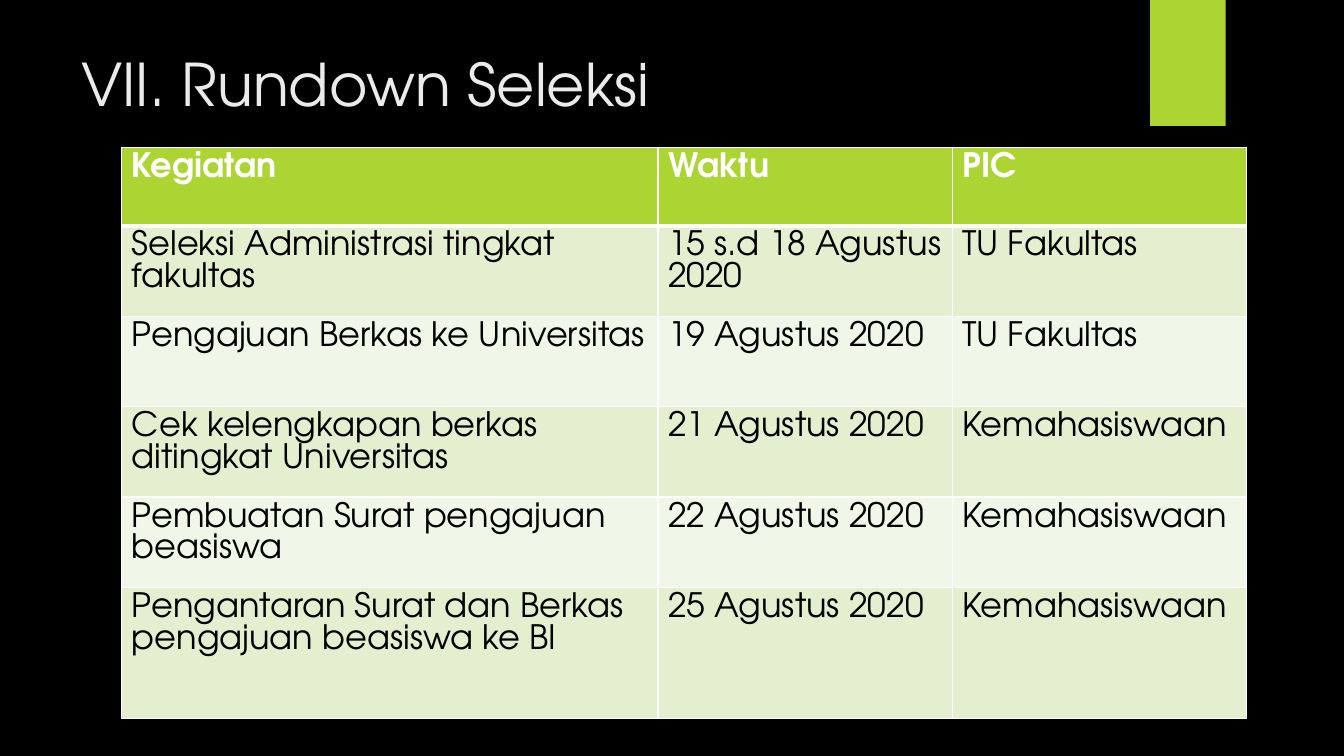
from lxml import etree
from pptx import Presentation
from pptx.dml.color import RGBColor
from pptx.enum.shapes import MSO_SHAPE
from pptx.enum.text import MSO_ANCHOR
from pptx.oxml.ns import qn
from pptx.util import Pt

RECT = MSO_SHAPE.RECTANGLE
TOP = MSO_ANCHOR.TOP
BLACK = RGBColor(0x00, 0x00, 0x00)
WHITE = RGBColor(0xFF, 0xFF, 0xFF)
PALE = RGBColor(0xEB, 0xEB, 0xEB)
LIME = RGBColor(0xAC, 0xD4, 0x33)
MINT = RGBColor(0xE3, 0xEF, 0xCE)
CREAM = RGBColor(0xF1, 0xF7, 0xE8)

HEAD = ("Kegiatan", "Waktu", "PIC")
PLAN = [
    ("Seleksi Administrasi tingkat fakultas", "15 s.d 18 Agustus 2020", "TU Fakultas"),
    ("Pengajuan Berkas ke Universitas", "19 Agustus 2020", "TU Fakultas"),
    ("Cek kelengkapan berkas ditingkat Universitas", "21 Agustus 2020", "Kemahasiswaan"),
    ("Pembuatan Surat pengajuan beasiswa", "22 Agustus 2020", "Kemahasiswaan"),
    ("Pengantaran Surat dan Berkas pengajuan beasiswa ke BI", "25 Agustus 2020", "Kemahasiswaan"),
]
COLS = (383, 210.25, 210.25)
ROWS = (56, 64.6, 64.6, 64.6, 64.6, 93.6)


class Deck:
    font = "TeX Gyre Adventor"

    def __init__(self, slide):
        self.slide = slide
        fill = slide.background.fill
        fill.solid()
        fill.fore_color.rgb = BLACK

    def label(self, frame, text, size, color, space, bold=False):
        para = frame.paragraphs[0]
        para.line_spacing = space
        run = para.add_run()
        run.text = text
        run.font.name = self.font
        run.font.size = Pt(size)
        run.font.bold = bold
        run.font.color.rgb = color

    def block(self, x, y, w, h, color):
        shape = self.slide.shapes.add_shape(RECT, Pt(x), Pt(y), Pt(w), Pt(h))
        shape.shadow.inherit = False
        shape.fill.solid()
        shape.fill.fore_color.rgb = color
        shape.line.fill.background()

    def title(self, x, y, w, h, text):
        frame = self.slide.shapes.add_textbox(Pt(x), Pt(y), Pt(w), Pt(h)).text_frame
        frame.word_wrap = True
        frame.vertical_anchor = TOP
        self.label(frame, text, 42, PALE, 0.9)

    def edge(self, cell, side, width):
        props = cell._tc.get_or_add_tcPr()
        line = etree.SubElement(props, qn(f"a:ln{side}"), w=str(Pt(width)))
        solid = etree.SubElement(line, qn("a:solidFill"))
        etree.SubElement(solid, qn("a:srgbClr"), val=str(WHITE))

    def cell(self, cell, text, fill, color, top, base, bold):
        for side, width in (("L", 1), ("R", 1), ("T", top), ("B", base)):
            self.edge(cell, side, width)
        cell.fill.solid()
        cell.fill.fore_color.rgb = fill
        self.label(cell.text_frame, text, 24, color, Pt(22.5), bold)

    def table(self, x, y, cols, rows, data):
        shape = self.slide.shapes.add_table(
            len(rows), len(cols), Pt(x), Pt(y), Pt(sum(cols)), Pt(sum(rows)))
        table = shape.table
        for col, width in zip(table.columns, cols):
            col.width = Pt(width)
        for i, (row, high, texts) in enumerate(zip(table.rows, rows, data)):
            row.height = Pt(high)
            head = i == 0
            fill = LIME if head else MINT if i % 2 else CREAM
            color = WHITE if head else BLACK
            top = 3 if i == 1 else 1
            base = 3 if head else 1
            for cell, text in zip(row.cells, texts):
                self.cell(cell, text, fill, color, top, base, head)


def main():
    show = Presentation()
    show.slide_width, show.slide_height = Pt(960), Pt(540)
    deck = Deck(show.slides.add_slide(show.slide_layouts[6]))
    deck.block(821.5, 0, 54, 90, LIME)
    deck.title(51, 36, 741, 110, "VII. Rundown Seleksi")
    deck.table(87, 105.25, COLS, ROWS, [HEAD] + PLAN)
    show.save("out.pptx")


if __name__ == "__main__":
    main()
